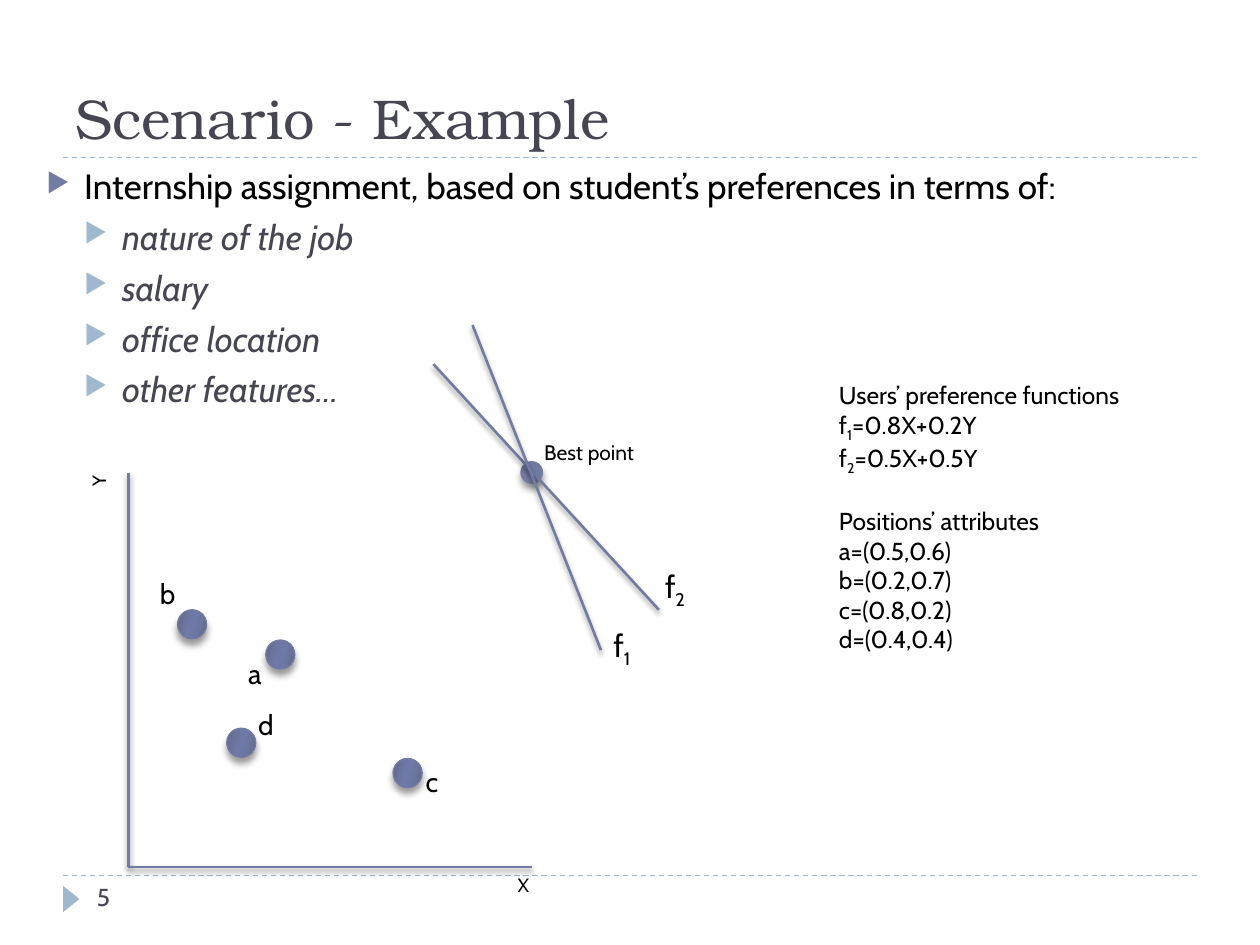
from lxml import etree
from pptx import Presentation
from pptx.dml.color import RGBColor
from pptx.enum.dml import MSO_LINE_DASH_STYLE as Dash
from pptx.enum.shapes import MSO_CONNECTOR as Connector, MSO_SHAPE as Shape
from pptx.enum.text import MSO_ANCHOR as Anchor, PP_ALIGN as Align
from pptx.oxml.ns import qn
from pptx.util import Inches, Pt

BODY_FONT = "Cabin"
TITLE_FONT = "TeX Gyre Bonum"
INDIGO, SKY, SLATE, BLACK = "727CA3", "9FB8CD", "464653", "000000"
DOT_STOPS = [(0, "5D6585"), (30, "6B759E"), (45, "6E79A7"),
             (55, "6E79A7"), (73, "6B759E"), (100, "5D6585")]


def color(value):
    return RGBColor.from_string(value)


def add_element(parent, tag, **attributes):
    return etree.SubElement(parent, qn(tag), {k: str(v) for k, v in attributes.items()})


def set_effects(shape, blur=0, distance=0):
    effects = add_element(shape._element.spPr, "a:effectLst")
    if blur:
        shadow = add_element(effects, "a:outerShdw", blurRad=Pt(blur), dist=Pt(distance),
                             dir=90 * 60000, rotWithShape=0)
        shadow_color = add_element(shadow, "a:srgbClr", val=BLACK)
        add_element(shadow_color, "a:alpha", val=40000)


def format_runs(paragraph, size, text_color, font=BODY_FONT, italic=False):
    for run in paragraph.runs:
        run.font.size = Pt(size)
        run.font.name = font
        run.font.italic = italic
        run.font.color.rgb = color(text_color)


def write_with_subscripts(paragraph, pieces, size, text_color):
    for index, piece in enumerate(pieces):
        run = paragraph.add_run()
        run.text = piece
        if index % 2:
            run.font._element.set("baseline", "-25000")
    format_runs(paragraph, size, text_color)


def add_text(slide, box, paragraphs, size, text_color=BLACK, wrap=False):
    shape = slide.shapes.add_textbox(*map(Inches, box))
    frame = shape.text_frame
    frame.word_wrap = wrap
    for index, pieces in enumerate(paragraphs):
        paragraph = frame.add_paragraph() if index else frame.paragraphs[0]
        write_with_subscripts(paragraph, pieces, size, text_color)
    return shape


def add_line(slide, start, end, line_color=INDIGO, width=1.5):
    line = slide.shapes.add_connector(Connector.STRAIGHT, *map(Inches, start + end))
    line.line.color.rgb = color(line_color)
    line.line.width = Pt(width)
    return line


def add_shadowed_line(slide, start, end):
    set_effects(add_line(slide, start, end), 3, 2)


def add_dot(slide, left, top, size, line_width):
    dot = slide.shapes.add_shape(Shape.OVAL, *map(Inches, (left, top, size, size)))
    dot.fill.solid()
    dot.fill.fore_color.rgb = color(INDIGO)
    dot.line.color.rgb = color(INDIGO)
    dot.line.width = Pt(line_width)
    set_effects(dot, 4, 3.4)
    return dot


def shade_dot(dot):
    dot.fill.gradient()
    dot.fill.gradient_angle = 344
    stops = dot._element.spPr.find(qn("a:gradFill")).find(qn("a:gsLst"))
    for stop in list(stops):
        stops.remove(stop)
    for position, value in DOT_STOPS:
        stop = add_element(stops, "a:gs", pos=position * 1000)
        add_element(stop, "a:srgbClr", val=value)


def add_frame(slide, left, top, width, bottom):
    for y in (bottom, top):
        rule = add_line(slide, (left, y), (left + width, y), SKY, 0.75)
        rule.line.dash_style = Dash.DASH
        set_effects(rule)
    marker = slide.shapes.add_shape(
        Shape.ISOSCELES_TRIANGLE, *map(Inches, (left - 0.04, bottom + 0.12, 0.21, 0.13)))
    marker.rotation = 90
    marker.shadow.inherit = False
    marker.fill.solid()
    marker.fill.fore_color.rgb = color(SKY)
    marker.line.fill.background()
    add_text(slide, (left + 0.17, bottom, 2.17, 0.4), [["5"]], 14, SLATE, wrap=True)


def set_title(slide, box, text):
    title = slide.shapes.title
    title.left, title.top, title.width, title.height = map(Inches, box)
    title.text_frame.text = text
    title.text_frame.vertical_anchor = Anchor.BOTTOM
    paragraph = title.text_frame.paragraphs[0]
    paragraph.alignment = Align.LEFT
    format_runs(paragraph, 32, SLATE, TITLE_FONT)


def set_bullet(paragraph, level, bullet_color):
    properties = paragraph._p.get_or_add_pPr()
    properties.set("marL", str(Inches(0.3 * (level + 1))))
    properties.set("indent", str(Inches(-0.3)))
    add_element(add_element(properties, "a:buClr"), "a:srgbClr", val=bullet_color)
    add_element(properties, "a:buSzPct", val=76000)
    add_element(properties, "a:buChar", char="▶")


def add_bullets(slide, box, heading, items):
    shape = add_text(slide, box, [[text] for text in [heading] + items], 20, wrap=True)
    for index, paragraph in enumerate(shape.text_frame.paragraphs):
        level = 1 if index else 0
        paragraph.level = level
        paragraph.alignment = Align.JUSTIFY
        paragraph.space_before = Pt(5 if level else 6)
        set_bullet(paragraph, level, SKY if level else INDIGO)
        if level:
            format_runs(paragraph, 20, SLATE, italic=True)


def add_plot(slide, left, top, width, height):
    bottom = top + height
    add_dot(slide, left + 3.12, top - 0.08, 0.16, 1.5)
    add_shadowed_line(slide, (left, top), (left, bottom))
    add_shadowed_line(slide, (left + width, bottom), (left, bottom))

    positions = [
        ("b", (0.39, 1.09), (0.15, 0.78, 0.33, 0.37)),
        ("d", (0.78, 2.03), (0.93, 1.82, 0.33, 0.37)),
        ("a", (1.09, 1.33), (0.85, 1.41, 0.31, 0.37)),
        ("c", (2.10, 2.27), (2.26, 2.27, 0.31, 0.37)),
    ]
    for name, (x, y), (label_x, label_y, label_width, label_height) in positions:
        shade_dot(add_dot(slide, left + x, top + y, 0.23, 0.75))
        add_text(slide, (left + label_x, top + label_y, label_width, label_height), [[name]], 16)

    functions = [
        ("2", (2.42, -0.86), (4.21, 1.09), (4.16, 0.70)),
        ("1", (2.73, -1.17), (3.75, 1.41), (3.75, 1.17)),
    ]
    for number, start, end, label in functions:
        add_shadowed_line(slide, (left + start[0], top + start[1]), (left + end[0], top + end[1]))
        add_text(slide, (left + label[0], top + label[1], 0.36, 0.4), [["f", number]], 18)

    add_text(slide, (left + 3.2, top - 0.31, 1.17, 0.3), [["Best point"]], 12, wrap=True)
    add_text(slide, (left + 2.99, bottom, 0.3, 0.29), [["X"]], 11)
    y_label = add_text(slide, (left - 0.38, top, 0.39, 0.21), [["Y"]], 11)
    y_label.text_frame._txBody.bodyPr.set("vert", "vert270")


def add_values(slide, box):
    shape = add_text(slide, box, [
        ["Users’ preference functions"],
        ["f", "1", "=0.8X+0.2Y"],
        ["f", "2", "=0.5X+0.5Y"],
        ["Positions’ attributes"],
        ["a=(0.5,0.6)"],
        ["b=(0.2,0.7)"],
        ["c=(0.8,0.2)"],
        ["d=(0.4,0.4)"],
    ], 14)
    shape.text_frame.paragraphs[3].space_before = Pt(17)


def main():
    presentation = Presentation()
    presentation.slide_width, presentation.slide_height = Inches(10), Inches(7.5)
    slide = presentation.slides.add_slide(presentation.slide_layouts[5])
    add_frame(slide, 0.5, 1.25, 9, 6.95)
    set_title(slide, (0.5, 0.17, 9, 1.08), "Scenario - Example")
    add_bullets(slide, (0.27, 1.26, 9.45, 2.13),
                "Internship assignment, based on student’s preferences in terms of:",
                ["nature of the job", "salary", "office location", "other features…"])
    add_plot(slide, 1.02, 3.75, 3.2, 3.13)
    add_values(slide, (6.56, 2.97, 2.58, 2.22))
    presentation.save("out.pptx")


if __name__ == "__main__":
    main()
